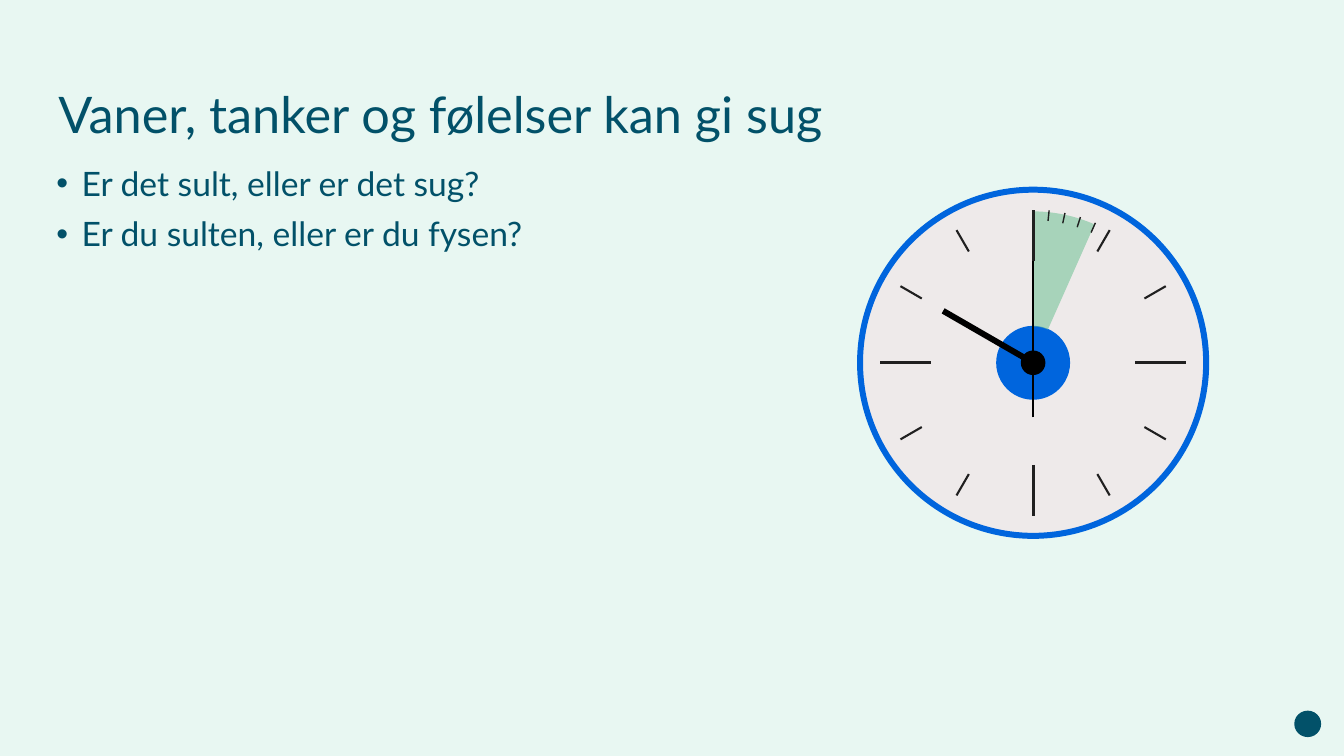
import math
from collections import namedtuple

from lxml import etree
from pptx import Presentation, util as u
from pptx.dml.color import RGBColor
from pptx.enum import shapes, text
from pptx.oxml.ns import qn

COLORS = {
    "background": "E8F7F2",
    "ink": "025169",
    "face": "DBD2D2",
    "veil": "FFFFFF",
    "blue": "0065DD",
    "hand": "000000",
    "mark": "202020",
    "wedge": "76C499",
}
FONT = "Lato"
WIDTH, HEIGHT = u.Inches(13.333), u.Inches(7.5)
Box = namedtuple("Box", "left top width height")


def share(left, top, width, height):
    return Box(int(left * WIDTH), int(top * HEIGHT), int(width * WIDTH), int(height * HEIGHT))


def rgb(name):
    return RGBColor.from_string(COLORS[name])


def add_text(slide, box, lines, size, color="ink", anchor=text.MSO_ANCHOR.TOP,
             inset=0, bullet=None, gap=0):
    frame = slide.shapes.add_textbox(*box).text_frame
    frame.word_wrap = True
    frame.vertical_anchor = anchor
    frame.margin_left = frame.margin_right = u.Inches(inset)
    frame.margin_top = frame.margin_bottom = u.Inches(inset / 2)
    for index, line in enumerate(lines):
        paragraph = frame.paragraphs[0] if index == 0 else frame.add_paragraph()
        paragraph.line_spacing = 0.9
        if index:
            paragraph.space_before = u.Pt(gap)
        if bullet:
            properties = paragraph._p.get_or_add_pPr()
            properties.set("marL", str(u.Inches(0.25)))
            properties.set("indent", str(-u.Inches(0.25)))
            etree.SubElement(properties, qn("a:buFont")).set("typeface", "Arial")
            etree.SubElement(properties, qn("a:buChar")).set("char", bullet)
        run = paragraph.add_run()
        run.text = line
        run.font.name = FONT
        run.font.size = u.Pt(size)
        run.font.color.rgb = rgb(color)


def add_figure(slide, kind, box, color, opacity=100, adjustments=()):
    figure = slide.shapes.add_shape(kind, *box)
    figure.shadow.inherit = False
    figure.line.fill.background()
    figure.fill.solid()
    figure.fill.fore_color.rgb = rgb(color)
    for index, value in enumerate(adjustments):
        figure.adjustments[index] = value
    if opacity < 100:
        fill_color = figure._element.spPr.find(qn("a:solidFill"))[0]
        etree.SubElement(fill_color, qn("a:alpha")).set("val", str(opacity * 1000))
    return figure


def add_line(slide, start, end, color, weight):
    line = slide.shapes.add_connector(shapes.MSO_CONNECTOR.STRAIGHT, *start, *end)
    line.line.color.rgb = rgb(color)
    line.line.width = u.Pt(weight)
    etree.SubElement(line._element.spPr, qn("a:effectLst"))


def add_clock(slide, box):
    radius = box.width / 2
    center_x, center_y = box.left + radius, box.top + radius

    def disc(size):
        reach = size * radius
        return Box(int(center_x - reach), int(center_y - reach), int(2 * reach), int(2 * reach))

    def point(degrees, distance):
        angle = math.radians(degrees)
        return (int(center_x + distance * radius * math.sin(angle)),
                int(center_y - distance * radius * math.cos(angle)))

    def spoke(degrees, inner, outer, color, weight):
        add_line(slide, point(degrees, inner), point(degrees, outer), color, weight)

    oval = shapes.MSO_SHAPE.OVAL
    add_figure(slide, oval, disc(0.99), "face")
    add_figure(slide, oval, disc(0.99), "veil", opacity=54)
    add_figure(slide, shapes.MSO_SHAPE.DONUT, disc(1), "blue", adjustments=[0.017])
    add_figure(slide, oval, disc(0.21), "blue")
    add_figure(slide, oval, disc(0.07), "hand")
    wedge = add_figure(slide, shapes.MSO_SHAPE.BLOCK_ARC, disc(0.86), "wedge",
                       opacity=59, adjustments=[0.3, 14.37, 0.38])
    wedge.rotation = 270

    spoke(300, 0, 0.59, "hand", 4.25)
    for minute in range(1, 5):
        spoke(minute * 6, 0.81, 0.87, "mark", 1)
    spoke(0, -0.31, 0.87, "hand", 1)
    for hour in range(12):
        inner, weight = (0.58, 2) if hour % 3 == 0 else (0.73, 1.5)
        spoke(hour * 30, inner, 0.87, "mark", weight)


def add_emblem(slide, box):
    add_figure(slide, shapes.MSO_SHAPE.OVAL, box, "ink")


def build_slide(slide):
    slide.background.fill.solid()
    slide.background.fill.fore_color.rgb = rgb("background")
    add_emblem(slide, share(0.963, 0.94, 0.02, 0.035))
    add_text(slide, share(0.036, 0.059, 0.892, 0.193), ["Vaner, tanker og følelser kan gi sug"],
             size=36, anchor=text.MSO_ANCHOR.MIDDLE, inset=0.1)
    add_text(slide, share(0.042, 0.221, 0.431, 0.635),
             ["Er det sult, eller er det sug?", "Er du sulten, eller er du fysen?"],
             size=24, bullet="•", gap=10)
    add_clock(slide, share(0.6377, 0.247, 0.262, 0.466))


def main():
    deck = Presentation()
    deck.slide_width, deck.slide_height = WIDTH, HEIGHT
    build_slide(deck.slides.add_slide(deck.slide_layouts[6]))
    deck.save("out.pptx")


if __name__ == "__main__":
    main()
